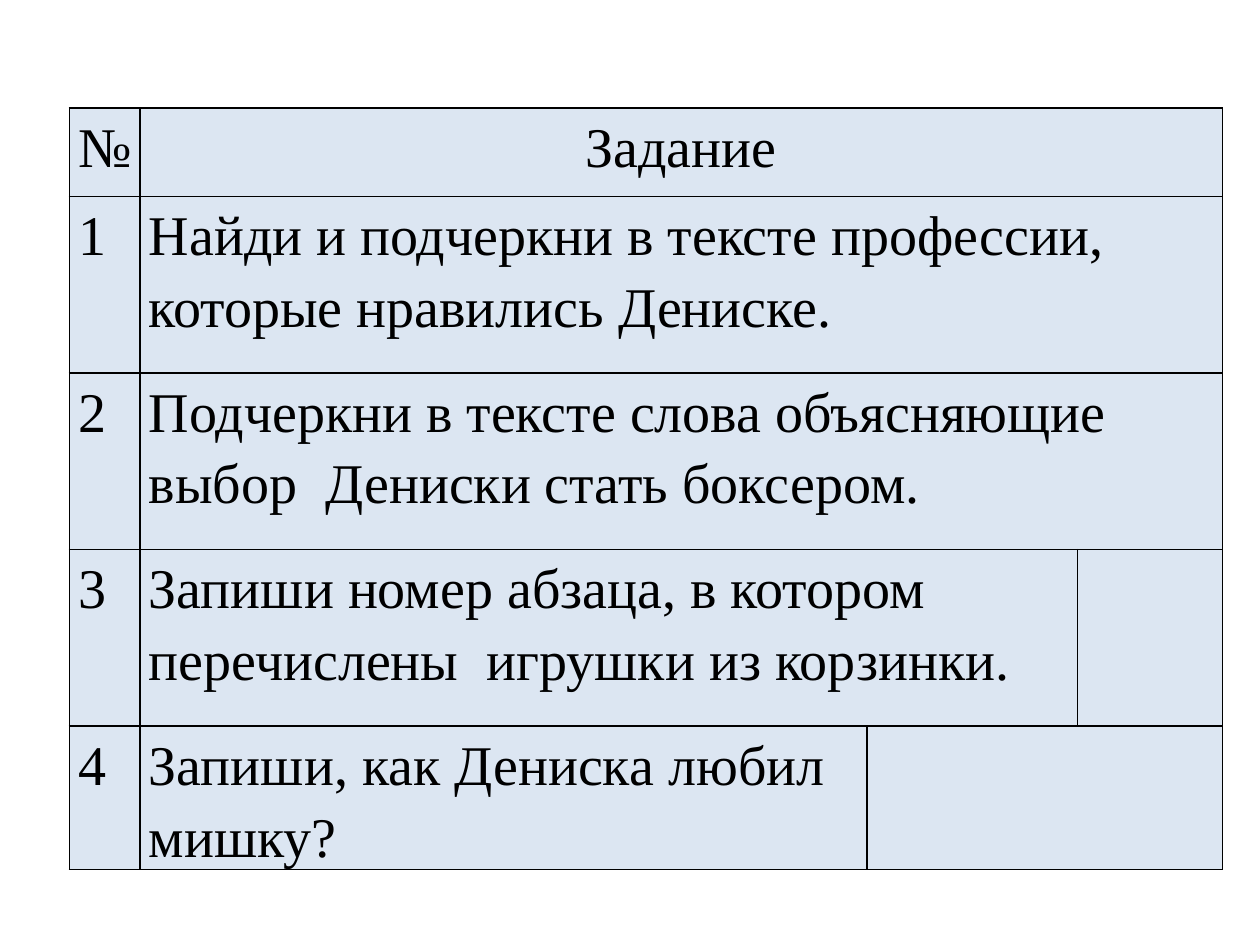
"""Build a slide with a numbered table of reading tasks."""
from lxml import etree
from pptx import Presentation
from pptx import util as u
from pptx.dml.color import RGBColor
from pptx.enum import text
from pptx.oxml import ns

HEADING = ("№", "Задание")
TASKS = [
    "Найди и подчеркни в тексте профессии, которые нравились Дениске.",
    "Подчеркни в тексте слова объясняющие выбор  Дениски стать боксером.",
    "Запиши номер абзаца, в котором перечислены  игрушки из корзинки.",
    "Запиши, как Дениска любил мишку?",
]
MERGES = [(0, 1, 3), (1, 1, 3), (2, 1, 3), (3, 1, 2), (4, 2, 3)]
COLUMN_WIDTHS = [1.42, 14.66, 4.24, 2.92]
ROW_HEIGHTS = [1.78, 3.56, 3.56, 3.56, 1.8]
LEFT, TOP = 1.4, 2.18
FONT = "Times New Roman"
BLACK = RGBColor(0x00, 0x00, 0x00)
PALE_BLUE = RGBColor(0xDC, 0xE6, 0xF2)


def write(cell, content, size=32, color=BLACK, align=text.PP_ALIGN.LEFT):
    paragraph = cell.text_frame.paragraphs[0]
    paragraph.alignment = align
    paragraph.line_spacing = 1.15
    run = paragraph.add_run()
    run.text = content
    run.font.name = FONT
    run.font.size = u.Pt(size)
    run.font.color.rgb = color


def style_cell(cell):
    cell.margin_left = cell.margin_right = u.Cm(0.18)
    cell.margin_top = cell.margin_bottom = 0
    properties = cell._tc.get_or_add_tcPr()
    for side in ("a:lnL", "a:lnR", "a:lnT", "a:lnB"):
        line = etree.SubElement(properties, ns.qn(side), w=str(u.Pt(1)))
        fill = etree.SubElement(line, ns.qn("a:solidFill"))
        etree.SubElement(fill, ns.qn("a:srgbClr"), val=str(BLACK))
    cell.fill.solid()
    cell.fill.fore_color.rgb = PALE_BLUE


def main():
    presentation = Presentation()
    presentation.slide_width, presentation.slide_height = u.Cm(25.4), u.Cm(19.05)
    slide = presentation.slides.add_slide(presentation.slide_layouts[6])
    table = slide.shapes.add_table(
        len(ROW_HEIGHTS), len(COLUMN_WIDTHS), u.Cm(LEFT), u.Cm(TOP),
        u.Cm(sum(COLUMN_WIDTHS)), u.Cm(sum(ROW_HEIGHTS))).table
    table.first_row = table.horz_banding = False
    for column, width in zip(table.columns, COLUMN_WIDTHS):
        column.width = u.Cm(width)
    for row, height in zip(table.rows, ROW_HEIGHTS):
        row.height = u.Cm(height)
    for cell in table.iter_cells():
        style_cell(cell)
    for row, first, last in MERGES:
        table.cell(row, first).merge(table.cell(row, last))
    for column, heading in enumerate(HEADING):
        write(table.cell(0, column), heading, align=text.PP_ALIGN.CENTER)
    for number, task in enumerate(TASKS, 1):
        write(table.cell(number, 0), str(number))
        write(table.cell(number, 1), task)
    presentation.save("out.pptx")


if __name__ == "__main__":
    main()
